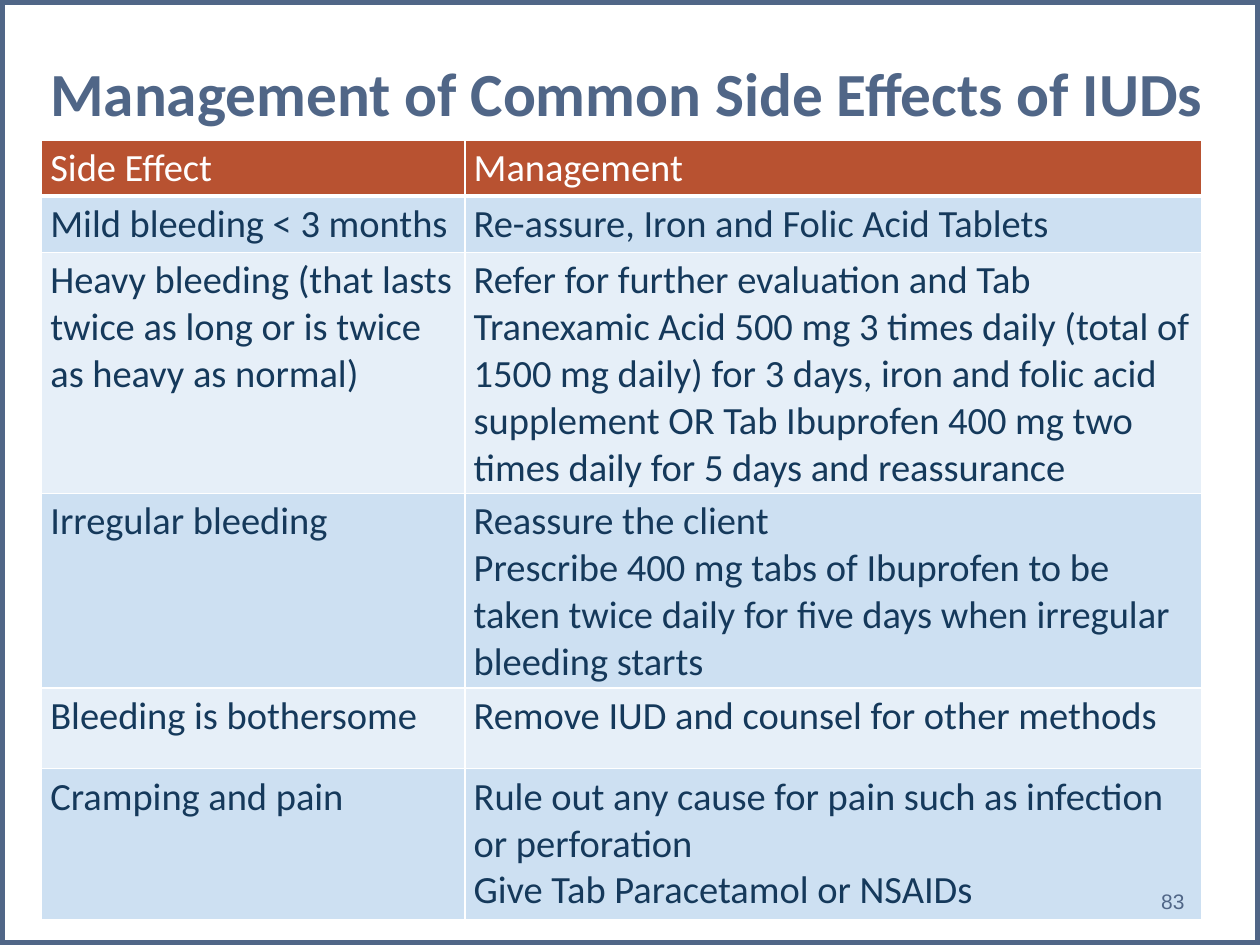
"""Build the slide on managing common side effects of IUDs."""
from dataclasses import dataclass

import pptx
import pptx.dml.color
import pptx.enum.shapes
import pptx.enum.text
import pptx.oxml
import pptx.oxml.ns
import pptx.util
from pptx.util import Inches

SLATE, NAVY, RUST, WHITE = "506687", "15395B", "B85231", "FFFFFF"
BANDS = ("CDE0F2", "E6EFF8")
ANCHOR = pptx.enum.text.MSO_ANCHOR
ALIGN = pptx.enum.text.PP_ALIGN


@dataclass
class Row:
    height: float
    effect: str
    management: str


@dataclass
class Label:
    text: str
    box: tuple[float, float, float, float]
    size: float
    font: str
    insets: tuple[float, float]
    bold: bool = False
    align: ALIGN = ALIGN.LEFT
    anchor: ANCHOR = ANCHOR.TOP


COLUMNS = (3.36, 5.85)
ROWS = [
    Row(0.35, "Side Effect", "Management"),
    Row(0.35, "Mild bleeding < 3 months", "Re-assure, Iron and Folic Acid Tablets"),
    Row(1.77, "Heavy bleeding (that lasts twice as long or is twice as heavy as normal)",
        "Refer for further evaluation and Tab Tranexamic Acid 500 mg 3 times daily "
        "(total of 1500 mg daily) for 3 days, iron and folic acid supplement OR "
        "Tab Ibuprofen 400 mg two times daily for 5 days and reassurance"),
    Row(1.49, "Irregular bleeding",
        "Reassure the client\nPrescribe 400 mg tabs of Ibuprofen to be taken twice "
        "daily for five days when irregular bleeding starts"),
    Row(0.64, "Bleeding is bothersome", "Remove IUD and counsel for other methods"),
    Row(1.2, "Cramping and pain",
        "Rule out any cause for pain such as infection or perforation\n"
        "Give Tab Paracetamol or NSAIDs"),
]
TITLE = Label("Management of Common Side Effects of IUDs", (0.33, 0.4, 9.52, 0.91),
              35, "Calibri", (0.07, 0.04), bold=True)
NUMBER = Label("83", (7.17, 6.95, 2.33, 0.4), 12, "Arial", (0.1, 0.05),
               align=ALIGN.RIGHT, anchor=ANCHOR.MIDDLE)


def rgb(color: str) -> pptx.dml.color.RGBColor:
    return pptx.dml.color.RGBColor.from_string(color)


def format_text(tf, size: float, font: str, color: str, bold: bool = False) -> None:
    for p in tf.paragraphs:
        for r in p.runs:
            r.font.size = pptx.util.Pt(size)
            r.font.name = font
            r.font.bold = bold
            r.font.color.rgb = rgb(color)


def set_insets(target, x: float, y: float) -> None:
    target.margin_left = target.margin_right = Inches(x)
    target.margin_top = target.margin_bottom = Inches(y)


def add_label(slide, label: Label) -> None:
    tf = slide.shapes.add_textbox(*map(Inches, label.box)).text_frame
    tf.word_wrap = True
    tf.vertical_anchor = label.anchor
    set_insets(tf, *label.insets)
    tf.text = label.text
    tf.paragraphs[0].alignment = label.align
    format_text(tf, label.size, label.font, SLATE, label.bold)


def set_border(cell, side: str, width: float) -> None:
    cell._tc.get_or_add_tcPr().append(pptx.oxml.parse_xml(
        f'<a:ln{side} {pptx.oxml.ns.nsdecls("a")} w="{pptx.util.Pt(width)}">'
        f'<a:solidFill><a:srgbClr val="{WHITE}"/></a:solidFill></a:ln{side}>'))


def fill_cell(cell, text: str, row: int) -> None:
    for side in "LRTB":
        thick = (row, side) in ((0, "B"), (1, "T"))
        set_border(cell, side, 3 if thick else 1)
    cell.fill.solid()
    cell.fill.fore_color.rgb = rgb(BANDS[(row - 1) % 2] if row else RUST)
    set_insets(cell, 0.07, 0.04)
    cell.text_frame.text = text
    format_text(cell.text_frame, 22, "Calibri", NAVY if row else WHITE)


def add_effects_table(slide, left: float, top: float) -> None:
    height = sum(row.height for row in ROWS)
    table = slide.shapes.add_table(len(ROWS), len(COLUMNS), Inches(left), Inches(top),
                                   Inches(sum(COLUMNS)), Inches(height)).table
    for column, width in zip(table.columns, COLUMNS):
        column.width = Inches(width)
    for i, row in enumerate(ROWS):
        table.rows[i].height = Inches(row.height)
        for j, text in enumerate((row.effect, row.management)):
            fill_cell(table.cell(i, j), text, i)


def add_frame(slide, width: int, height: int) -> None:
    sp = slide.shapes.add_shape(pptx.enum.shapes.MSO_SHAPE.RECTANGLE, 0, 0, width, height)
    sp.shadow.inherit = False
    sp.fill.background()
    sp.line.color.rgb = rgb(SLATE)
    sp.line.width = pptx.util.Pt(5.25)


def main() -> None:
    prs = pptx.Presentation()
    prs.slide_width, prs.slide_height = Inches(10), Inches(7.5)
    s = prs.slides.add_slide(prs.slide_layouts[6])
    add_label(s, TITLE)
    add_effects_table(s, 0.33, 1.11)
    add_label(s, NUMBER)
    add_frame(s, prs.slide_width, prs.slide_height)
    prs.save("out.pptx")


if __name__ == "__main__":
    main()
